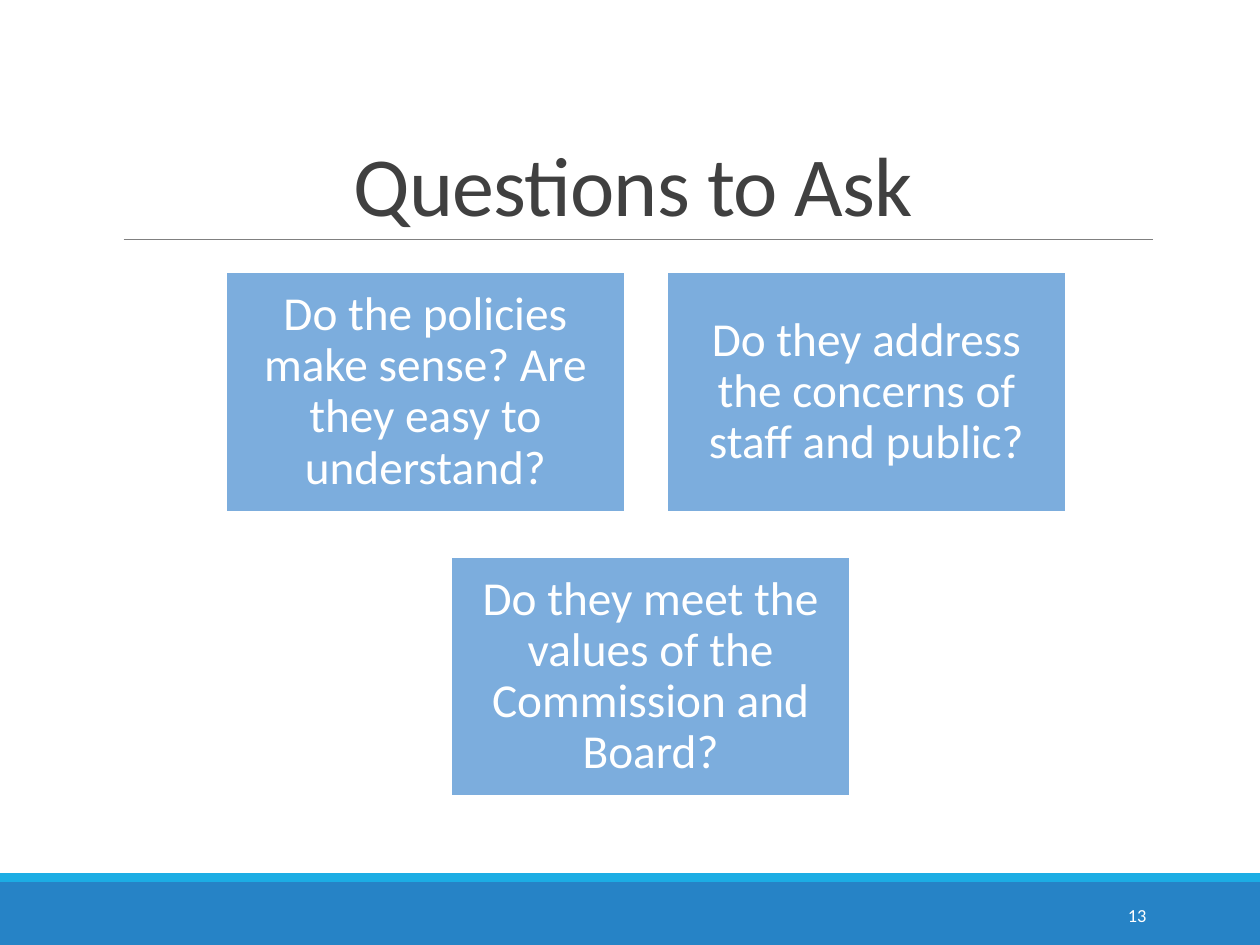
"""Build the "Questions to Ask" slide with three question boxes."""
from dataclasses import dataclass

from lxml.etree import SubElement
from pptx import Presentation
from pptx.dml.color import RGBColor
from pptx.enum.shapes import MSO_CONNECTOR as Connector, MSO_SHAPE as Shape
from pptx.enum.text import MSO_ANCHOR as Anchor, PP_ALIGN as Align
from pptx.oxml.ns import qn
from pptx.util import Cm, Pt

COLORS = {
    "band": "2683C6",
    "stripe": "1CADE4",
    "rule": "808080",
    "title": "404040",
    "box": "7CADDD",
    "white": "FFFFFF",
}
FONT = "Calibri"
BOX_WIDTH, BOX_HEIGHT, BOX_INSET = 8.05, 4.83, 0.28


@dataclass(frozen=True)
class Band:
    top: float
    height: float
    color: str


@dataclass(frozen=True)
class Question:
    left: float
    top: float
    text: str


@dataclass(frozen=True)
class TextStyle:
    size: float
    color: str
    align: Align
    anchor: Anchor
    line_spacing: float = 1.0


BANDS = [Band(17.78, 1.27, "band"), Band(17.6, 0.18, "stripe")]
QUESTIONS = [
    Question(4.55, 5.49, "Do the policies make sense? Are they easy to understand?"),
    Question(13.44, 5.49, "Do they address the concerns of staff and public?"),
    Question(9.09, 11.23, "Do they meet the values of the Commission and Board?"),
]
TITLE_STYLE = TextStyle(48, "title", Align.CENTER, Anchor.BOTTOM, 0.85)
NUMBER_STYLE = TextStyle(10.5, "white", Align.RIGHT, Anchor.MIDDLE)
QUESTION_STYLE = TextStyle(27, "white", Align.CENTER, Anchor.MIDDLE, 0.9)


def rgb(name: str) -> RGBColor:
    return RGBColor.from_string(COLORS[name])


def set_attributes(target, values: dict) -> None:
    for name, value in values.items():
        setattr(target, name, value)


def write_text(shape, text: str, style: TextStyle):
    frame = shape.text_frame
    set_attributes(frame, {"word_wrap": True, "vertical_anchor": style.anchor})
    paragraph = frame.paragraphs[0]
    set_attributes(paragraph, {"alignment": style.align, "line_spacing": style.line_spacing})
    run = paragraph.add_run()
    run.text = text
    set_attributes(run.font, {"name": FONT, "size": Pt(style.size)})
    run.font.color.rgb = rgb(style.color)
    return run


def add_rectangle(slide, left: float, top: float, width: float, height: float, color: str):
    shape = slide.shapes.add_shape(Shape.RECTANGLE, Cm(left), Cm(top), Cm(width), Cm(height))
    shape.shadow.inherit = False
    shape.fill.solid()
    shape.fill.fore_color.rgb = rgb(color)
    shape.line.fill.background()
    return shape


def add_rule(slide, left: float, right: float, top: float) -> None:
    rule = slide.shapes.add_connector(Connector.STRAIGHT, Cm(left), Cm(top), Cm(right), Cm(top))
    rule.line.color.rgb = rgb("rule")
    rule.line.width = Pt(0.5)
    SubElement(rule._element.spPr, qn("a:effectLst"))


def add_title(slide, text: str) -> None:
    title = slide.shapes.title
    set_attributes(title, {"left": Cm(2.29), "top": Cm(0.79), "width": Cm(20.96), "height": Cm(4.04)})
    run = write_text(title, text, TITLE_STYLE)
    run._r.get_or_add_rPr().set("spc", "-50")


def add_question(slide, question: Question) -> None:
    box = add_rectangle(slide, question.left, question.top, BOX_WIDTH, BOX_HEIGHT, "box")
    box.line.color.rgb = rgb("white")
    box.line.width = Pt(1.25)
    sides = ("left", "top", "right", "bottom")
    set_attributes(box.text_frame, {f"margin_{side}": Cm(BOX_INSET) for side in sides})
    write_text(box, question.text, QUESTION_STYLE)


def main() -> None:
    presentation = Presentation()
    set_attributes(presentation, {"slide_width": Cm(25.4), "slide_height": Cm(19.05)})
    slide = presentation.slides.add_slide(presentation.slide_layouts[5])
    for band in BANDS:
        add_rectangle(slide, 0, band.top, 25.4, band.height, band.color)
    add_rule(slide, 2.49, 23.24, 4.83)
    add_title(slide, "Questions to Ask")
    number = slide.shapes.add_textbox(Cm(20.62), Cm(17.93), Cm(2.74), Cm(1.02))
    write_text(number, "13", NUMBER_STYLE)
    for question in QUESTIONS:
        add_question(slide, question)
    presentation.save("out.pptx")


if __name__ == "__main__":
    main()
